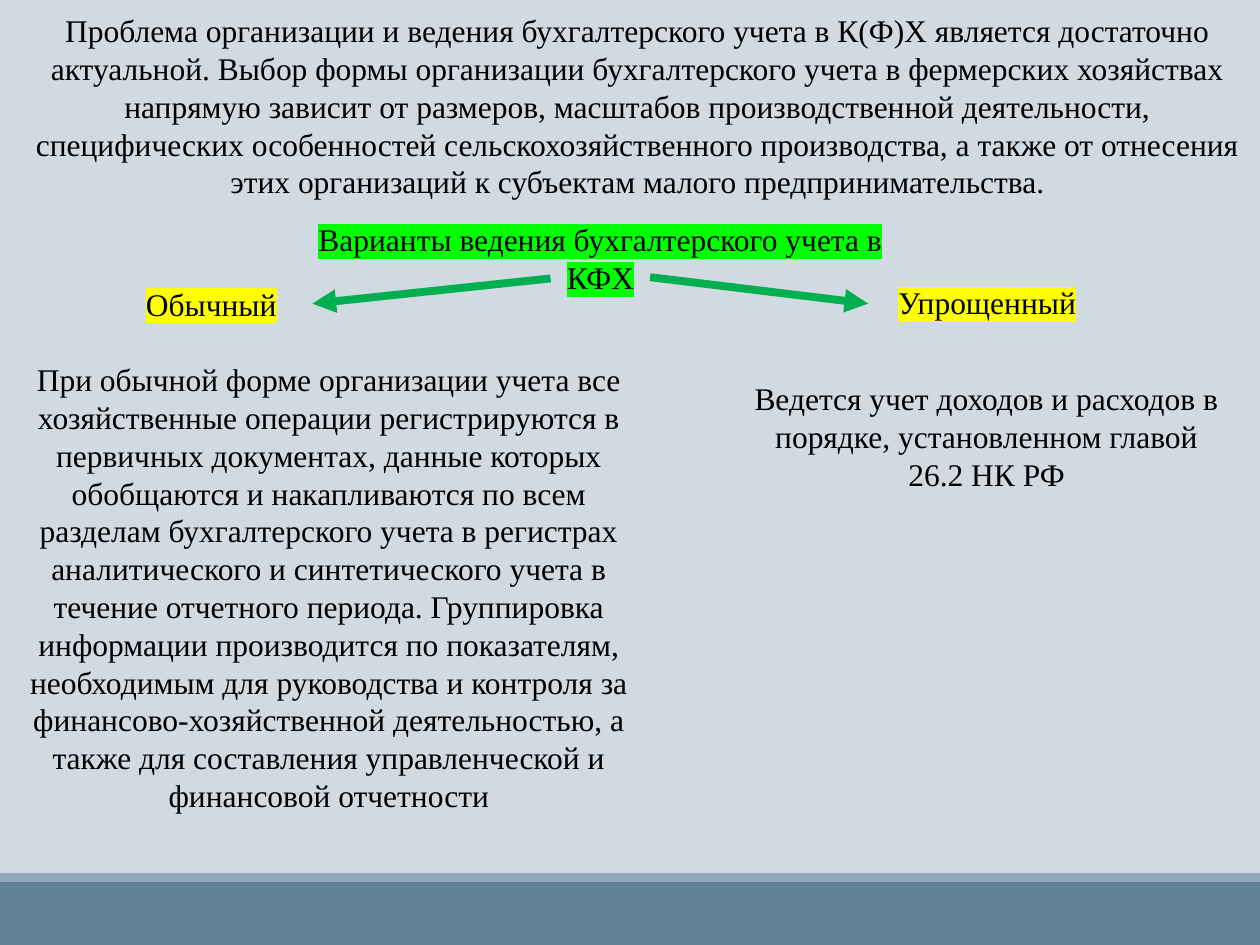
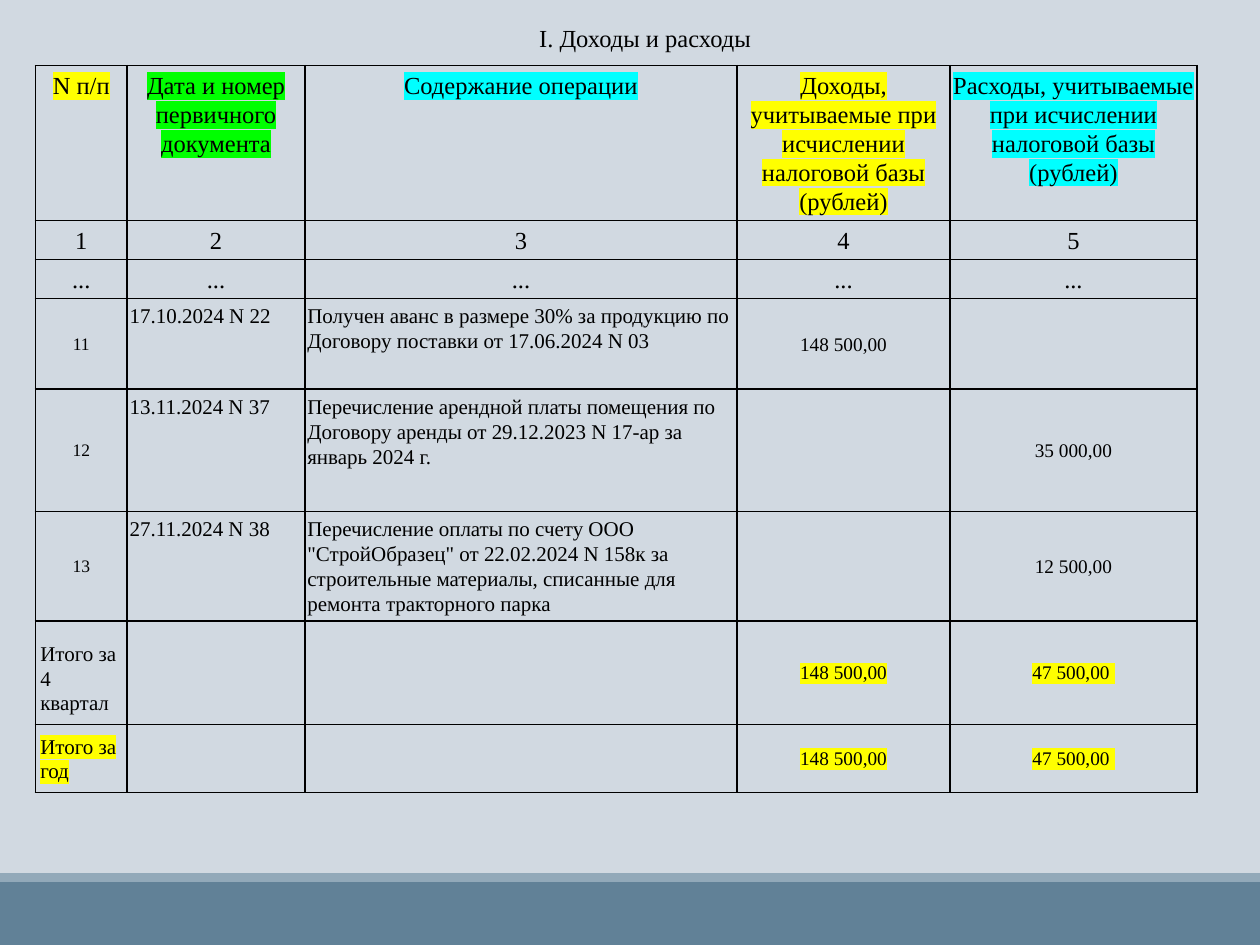
from lxml import etree
from pptx import Presentation
from pptx.dml.color import RGBColor
from pptx.enum.shapes import MSO_CONNECTOR, MSO_SHAPE
from pptx.enum.text import MSO_ANCHOR, PP_ALIGN
from pptx.oxml.ns import qn
from pptx.util import Inches, Pt

COLORS = {
    "background": "D1D9E1", "band": "618197", "stripe": "92A9B9", "text": "000000",
    "arrow": "00B050", "green": "00FF00", "yellow": "FFFF00", "cyan": "00FFFF",
}
FONT = "Times New Roman"
LEFT, CENTER = PP_ALIGN.LEFT, PP_ALIGN.CENTER
TOP, MIDDLE, BOTTOM = MSO_ANCHOR.TOP, MSO_ANCHOR.MIDDLE, MSO_ANCHOR.BOTTOM


def write_text(text_frame, text, size, align, highlight=None):
    text_frame.word_wrap = True
    paragraph = text_frame.paragraphs[0]
    paragraph.alignment = align
    run = paragraph.add_run()
    run.text = text
    for name, value in {"size": Pt(size), "name": FONT}.items():
        setattr(run.font, name, value)
    run.font.color.rgb = RGBColor.from_string(COLORS["text"])
    if highlight:
        mark = etree.Element(qn("a:highlight"))
        etree.SubElement(mark, qn("a:srgbClr"), val=COLORS[highlight])
        run.font._element.find(qn("a:latin")).addprevious(mark)
    return paragraph


def add_text(slide, box, text, size=18, align=CENTER, highlight=None):
    shape = slide.shapes.add_textbox(*[Inches(value) for value in box])
    write_text(shape.text_frame, text, size, align, highlight)
    return shape


presentation = Presentation()
presentation.slide_width, presentation.slide_height = Inches(10), Inches(7.5)
background = presentation.slide_master.background.fill
background.solid()
background.fore_color.rgb = RGBColor.from_string(COLORS["background"])

slides = [presentation.slides.add_slide(presentation.slide_layouts[6]) for _ in range(2)]
for slide in slides:
    for color, top, height in [("band", 7, 0.5), ("stripe", 6.93, 0.07)]:
        shape = slide.shapes.add_shape(
            MSO_SHAPE.RECTANGLE, 0, Inches(top), Inches(10), Inches(height))
        shape.shadow.inherit = False
        shape.fill.solid()
        shape.fill.fore_color.rgb = RGBColor.from_string(COLORS[color])
        shape.line.fill.background()
variants_slide, ledger_slide = slides

add_text(variants_slide, (0.12, 0.04, 9.88, 1.62),
         "Проблема организации и ведения бухгалтерского учета в К(Ф)Х является достаточно "
         "актуальной. Выбор формы организации бухгалтерского учета в фермерских хозяйствах "
         "напрямую зависит от размеров, масштабов производственной деятельности, "
         "специфических особенностей сельскохозяйственного производства, а также от "
         "отнесения этих организаций к субъектам малого предпринимательства.")
add_text(variants_slide, (2.24, 1.7, 5.05, 0.71),
         "Варианты ведения бухгалтерского учета в КФХ", highlight="green")
usual = add_text(variants_slide, (1.06, 2.21, 1.42, 0.4), "Обычный",
                 align=LEFT, highlight="yellow")
add_text(variants_slide, (7.03, 2.2, 1.62, 0.4), "Упрощенный",
         align=LEFT, highlight="yellow")
add_text(variants_slide, (0.1, 2.81, 5.02, 3.74),
         "При обычной форме организации учета все хозяйственные операции регистрируются в "
         "первичных документах, данные которых обобщаются и накапливаются по всем разделам "
         "бухгалтерского учета в регистрах аналитического и синтетического учета в течение "
         "отчетного периода. Группировка информации производится по показателям, "
         "необходимым для руководства и контроля за финансово-хозяйственной деятельностью, "
         "а также для составления управленческой и финансовой отчетности")
add_text(variants_slide, (5.81, 2.96, 4.04, 1.01),
         "Ведется учет доходов и расходов в порядке, установленном главой 26.2 НК РФ")

for points, target in [((4.37, 2.21, 2.48, 2.41), usual), ((5.16, 2.2, 6.89, 2.41), None)]:
    arrow = variants_slide.shapes.add_connector(
        MSO_CONNECTOR.STRAIGHT, *[Inches(value) for value in points])
    if target:
        arrow.end_connect(target, 3)
    arrow.line.color.rgb = RGBColor.from_string(COLORS["arrow"])
    arrow.line.width = Pt(4.5)
    etree.SubElement(arrow.line._get_or_add_ln(), qn("a:tailEnd"), type="triangle")
    etree.SubElement(arrow._element.spPr, qn("a:effectLst"))

column_widths = [0.73, 1.41, 3.43, 1.69, 1.96]
row_heights = [1.22, 0.3, 0.3, 0.72, 0.97, 0.86, 0.82, 0.54]
ledger = [
    ["N п/п", "Дата и номер первичного документа", "Содержание операции",
     "Доходы, учитываемые при исчислении налоговой базы (рублей)",
     "Расходы, учитываемые при исчислении налоговой базы (рублей)"],
    ["1", "2", "3", "4", "5"],
    ["..."] * 5,
    ["11", "17.10.2024 N 22",
     "Получен аванс в размере 30% за продукцию по Договору поставки от 17.06.2024 N 03",
     "148 500,00", ""],
    ["12", "13.11.2024 N 37",
     "Перечисление арендной платы помещения по Договору аренды от 29.12.2023 N 17-ар "
     "за январь 2024 г.", "", "35 000,00"],
    ["13", "27.11.2024 N 38",
     'Перечисление оплаты по счету ООО "СтройОбразец" от 22.02.2024 N 158к за '
     "строительные материалы, списанные для ремонта тракторного парка", "", "12 500,00"],
    ["Итого за 4 квартал", "", "", "148 500,00", "47 500,00 "],
    ["Итого за год", "", "", "148 500,00", "47 500,00 "],
]
header_marks = ["yellow", "green", "cyan", "yellow", "cyan"]
entry_styles = [(10, CENTER, MIDDLE), (12, LEFT, TOP), (12, LEFT, TOP),
                (11, CENTER, MIDDLE), (11, CENTER, MIDDLE)]
total_styles = [(12, LEFT, BOTTOM)] + entry_styles[1:]

table = ledger_slide.shapes.add_table(
    len(ledger), len(column_widths), Inches(0.28), Inches(0.52),
    Inches(sum(column_widths)), Inches(sum(row_heights))).table
table.first_row = table.horz_banding = False
for column, width in zip(table.columns, column_widths):
    column.width = Inches(width)
for row, height in zip(table.rows, row_heights):
    row.height = Inches(height)

for row_index, texts in enumerate(ledger):
    is_total = row_index >= 6
    margin_x, margin_y = (0.04, 0.07) if is_total else (0.02, 0.04)
    for column_index, text in enumerate(texts):
        cell = table.cell(row_index, column_index)
        properties = cell._tc.get_or_add_tcPr()
        for side in ("a:lnL", "a:lnR", "a:lnT", "a:lnB"):
            border = etree.SubElement(properties, qn(side), w=str(Pt(1)))
            fill = etree.SubElement(border, qn("a:solidFill"))
            etree.SubElement(fill, qn("a:srgbClr"), val=COLORS["text"])
        cell.fill.background()
        if not text:
            continue
        highlight = None
        if row_index < 3:
            size, align, anchor = 14, CENTER, MIDDLE if row_index == 2 else TOP
            if row_index == 0:
                highlight = header_marks[column_index]
        else:
            size, align, anchor = (total_styles if is_total else entry_styles)[column_index]
            if is_total and (column_index > 0 or row_index == 7):
                highlight = "yellow"
        cell_format = {
            "margin_left": Inches(margin_x), "margin_right": Inches(margin_x),
            "margin_top": Inches(margin_y), "margin_bottom": Inches(margin_y),
            "vertical_anchor": anchor,
        }
        for name, value in cell_format.items():
            setattr(cell, name, value)
        paragraph = write_text(cell.text_frame, text, size, align, highlight)
        paragraph.line_spacing = 1.07

add_text(ledger_slide, (0.12, 0.13, 10, 0.34), "I. Доходы и расходы", size=14)

presentation.save("out.pptx")
